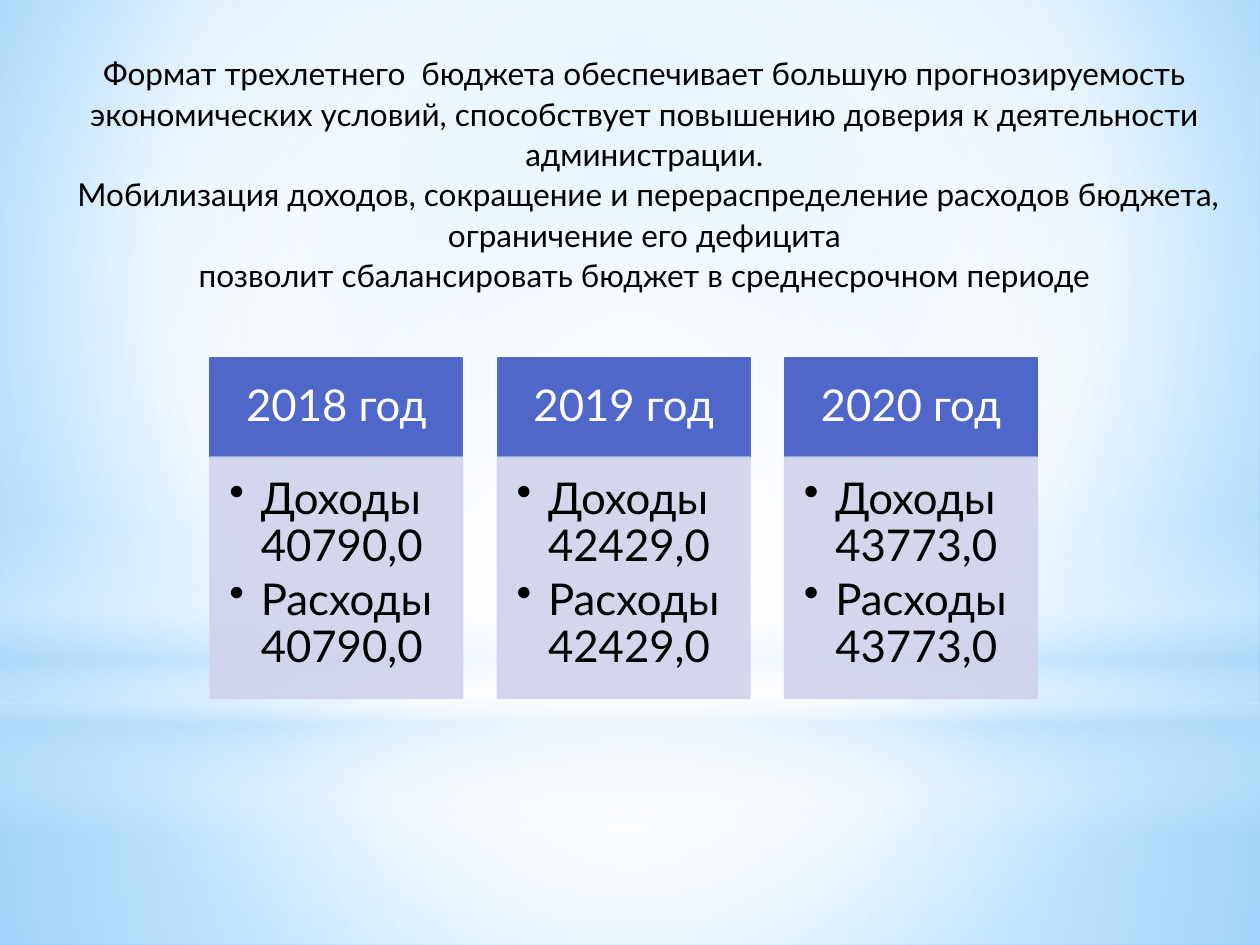
"""Build the slide on the three-year budget with one column per year."""
from dataclasses import dataclass

from lxml.etree import SubElement
from pptx import Presentation
from pptx.dml.color import RGBColor
from pptx.enum.shapes import MSO_SHAPE
from pptx.enum.text import MSO_ANCHOR, MSO_AUTO_SIZE, PP_ALIGN
from pptx.oxml.ns import qn
from pptx.util import Inches, Pt

COLORS = {
    "white": "FFFFFF",
    "black": "000000",
    "sky": "B4DCFA",
    "bg_top": "9ED5FF",
    "bg_edge": "5BB9FF",
    "header": "4E67C8",
    "body": "D0D3EB",
}
FONT = "Lato"
BODY_OPACITY = 90
COLUMN_LEFT, COLUMN_STEP, COLUMN_WIDTH = 1.67, 2.28, 2
HEADER_TOP, HEADER_HEIGHT, BODY_HEIGHT = 2.84, 0.79, 1.91
INTRO = (
    "Формат трехлетнего  бюджета обеспечивает большую прогнозируемость "
    "экономических условий, способствует повышению доверия к деятельности "
    "администрации.",
    " Мобилизация доходов, сокращение и перераспределение расходов бюджета, "
    "ограничение его дефицита",
    "позволит сбалансировать бюджет в среднесрочном периоде",
)


@dataclass(frozen=True)
class Gradient:
    """Stops of (position, colour, opacity); linear when focus is None."""
    stops: tuple
    focus: tuple | None = (50, 50, 50, 50)


@dataclass(frozen=True)
class Glow:
    """A full-width background layer."""
    top: float
    height: float
    gradient: Gradient
    outline: MSO_SHAPE = MSO_SHAPE.RECTANGLE


@dataclass(frozen=True)
class BudgetYear:
    """Income and spending of one year."""
    year: str
    income: str
    spending: str


BACKGROUND = Gradient(
    ((0, "bg_top", 100), (60, "white", 100), (100, "bg_edge", 100)), (20, 10, 20, 60))
GLOWS = (
    Glow(5.58, 1.92, Gradient(((0, "white", 91), (37, "white", 76), (100, "sky", 79)))),
    Glow(0, 5.58, Gradient(((0, "white", 89), (48, "white", 62), (100, "sky", 79)))),
    Glow(4.12, 2.5, Gradient(
        ((0, "white", 0), (29, "white", 30), (45, "sky", 40),
         (55, "white", 26), (65, "sky", 60), (100, "white", 0)), None)),
    Glow(1.75, 5.58, Gradient(((0, "white", 100), (56, "white", 0))), MSO_SHAPE.OVAL),
)
YEARS = (
    BudgetYear("2018 год", "40790,0", "40790,0"),
    BudgetYear("2019 год", "42429,0", "42429,0"),
    BudgetYear("2020 год", "43773,0", "43773,0"),
)


def rgb(name: str) -> RGBColor:
    """Look up a palette colour."""
    return RGBColor.from_string(COLORS[name])


def set_opacity(color, percent: float) -> None:
    """Give a colour element an opacity."""
    SubElement(color, qn("a:alpha"), val=str(percent * 1000))


def apply_gradient(fill, holder, gradient: Gradient) -> None:
    """Fill the holder element with the gradient."""
    fill.gradient()
    element = next(holder.iter(qn("a:gradFill")))
    for child in list(element):
        element.remove(child)
    stops = SubElement(element, qn("a:gsLst"))
    for position, name, opacity in gradient.stops:
        stop = SubElement(stops, qn("a:gs"), pos=str(position * 1000))
        set_opacity(SubElement(stop, qn("a:srgbClr"), val=COLORS[name]), opacity)
    if gradient.focus is None:
        SubElement(element, qn("a:lin"), ang="5400000", scaled="0")
    else:
        circle = SubElement(element, qn("a:path"), path="circle")
        sides = {side: str(value * 1000) for side, value in zip("ltrb", gradient.focus)}
        SubElement(circle, qn("a:fillToRect"), **sides)


def add_glow(slide, glow: Glow) -> None:
    """Draw one background layer."""
    layer = slide.shapes.add_shape(
        glow.outline, 0, Inches(glow.top), Inches(10), Inches(glow.height))
    layer.shadow.inherit = False
    layer.line.fill.background()
    apply_gradient(layer.fill, layer.element.spPr, glow.gradient)


def write(frame, lines: tuple, size: float, color: str, align: PP_ALIGN,
          spacing: float, after: float = 0) -> None:
    """Write one paragraph per line and format it."""
    frame.word_wrap = True
    frame.text = "\n".join(lines)
    for paragraph in frame.paragraphs:
        paragraph.alignment = align
        paragraph.line_spacing = spacing
        paragraph.space_after = Pt(after)
        for run in paragraph.runs:
            run.font.name = FONT
            run.font.size = Pt(size)
            run.font.color.rgb = rgb(color)


def add_intro(slide) -> None:
    """Draw the introductory text."""
    intro = slide.shapes.add_textbox(Inches(0.43), Inches(0.36), Inches(9.37), Inches(2.05))
    write(intro.text_frame, INTRO, 18, "black", PP_ALIGN.CENTER, 1.07)
    intro.text_frame.auto_size = MSO_AUTO_SIZE.SHAPE_TO_FIT_TEXT
    intro.text_frame.paragraphs[-1].space_after = Pt(8)


def add_block(slide, left: float, top: float, height: float, color: str,
              anchor: MSO_ANCHOR, insets: tuple):
    """Draw one filled rectangle of a column."""
    block = slide.shapes.add_shape(
        MSO_SHAPE.RECTANGLE, Inches(left), Inches(top), Inches(COLUMN_WIDTH), Inches(height))
    block.shadow.inherit = False
    block.fill.solid()
    block.fill.fore_color.rgb = rgb(color)
    block.line.color.rgb = rgb(color)
    block.line.width = Pt(1.25)
    frame = block.text_frame
    frame.vertical_anchor = anchor
    frame.margin_left, frame.margin_top, frame.margin_right, frame.margin_bottom = map(
        Inches, insets)
    return block


def add_bullets(frame) -> None:
    """Give every paragraph a hanging bullet."""
    for paragraph in frame.paragraphs:
        properties = paragraph._p.get_or_add_pPr()
        properties.set("marL", str(Inches(0.25)))
        properties.set("indent", str(Inches(-0.25)))
        SubElement(properties, qn("a:buChar"), char="•")


def add_year(slide, left: float, budget: BudgetYear) -> None:
    """Draw the header and the figures of one year."""
    header = add_block(slide, left, HEADER_TOP, HEADER_HEIGHT, "header",
                       MSO_ANCHOR.MIDDLE, (0.19, 0.11, 0.19, 0.11))
    write(header.text_frame, (budget.year,), 25, "white", PP_ALIGN.CENTER, 0.9)
    body = add_block(slide, left, HEADER_TOP + HEADER_HEIGHT, BODY_HEIGHT, "body",
                     MSO_ANCHOR.TOP, (0.15, 0.15, 0.19, 0.22))
    for color in body.element.spPr.iter(qn("a:srgbClr")):
        set_opacity(color, BODY_OPACITY)
    figures = (f"Доходы {budget.income}", f"Расходы {budget.spending}")
    write(body.text_frame, figures, 25, "black", PP_ALIGN.LEFT, 0.9, 3.75)
    add_bullets(body.text_frame)


def main() -> None:
    """Build and save the presentation."""
    deck = Presentation()
    deck.slide_width, deck.slide_height = Inches(10), Inches(7.5)
    slide = deck.slides.add_slide(deck.slide_layouts[6])
    apply_gradient(slide.background.fill, slide.element, BACKGROUND)
    for glow in GLOWS:
        add_glow(slide, glow)
    add_intro(slide)
    for index, budget in enumerate(YEARS):
        add_year(slide, COLUMN_LEFT + index * COLUMN_STEP, budget)
    deck.save("out.pptx")


if __name__ == "__main__":
    main()
